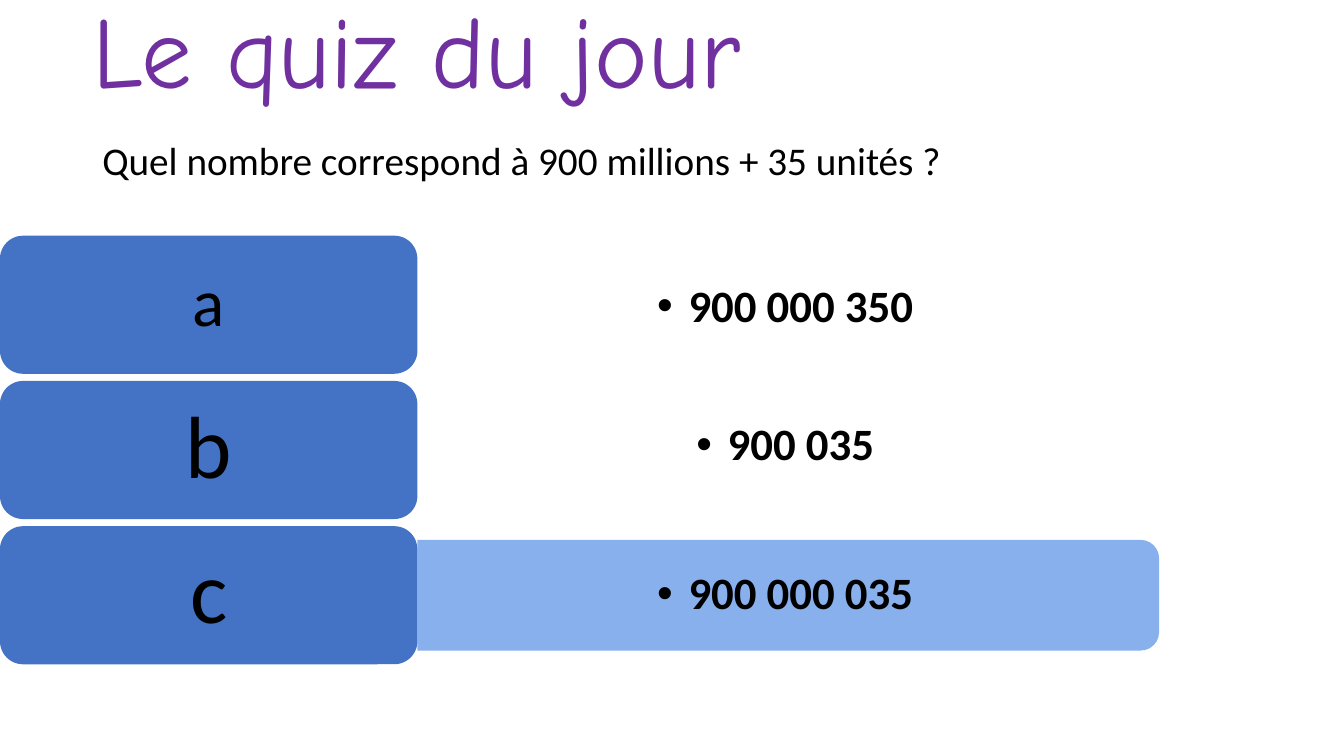
from lxml.etree import SubElement
from pptx import Presentation
from pptx.dml.color import RGBColor
from pptx.enum.shapes import MSO_SHAPE
from pptx.enum.text import MSO_ANCHOR, PP_ALIGN
from pptx.oxml.ns import qn
from pptx.util import Cm, Pt

PURPLE = RGBColor(0x70, 0x30, 0xA0)
BLACK = RGBColor(0x00, 0x00, 0x00)
WHITE = RGBColor(0xFF, 0xFF, 0xFF)
BLUE = RGBColor(0x44, 0x72, 0xC4)
LIGHT_BLUE = RGBColor(0x7C, 0xA8, 0xEA)

LABEL_WIDTH, LABEL_HEIGHT = 10.52, 3.48
FIRST_LABEL_TOP, LABEL_STEP = 5.94, 3.66
BAR_LENGTH, BAR_THICKNESS = 18.69, 2.79
ANSWER_WIDTH, ANSWER_HEIGHT = 18.54, 2.51

# letter, letter size, answer, bar colour, centre of the answer in cm
CHOICES = [
    ("a", 48, "900 000 350", WHITE, 7.75),
    ("b", 63, "900 035", WHITE, 11.25),
    ("c", 63, "900 000 035", LIGHT_BLUE, 15.0),
]


def write(shape, text, size, font="Calibri", color=BLACK, bold=False):
    frame = shape.text_frame
    frame.word_wrap = True
    frame.text = text
    paragraph = frame.paragraphs[0]
    style = paragraph.runs[0].font
    style.name, style.size, style.bold = font, Pt(size), bold
    style.color.rgb = color
    return paragraph


def add_text(slide, left, top, width, height, text, size, **style):
    box = slide.shapes.add_textbox(Cm(left), Cm(top), Cm(width), Cm(height))
    return box.text_frame, write(box, text, size, **style)


def add_block(slide, kind, left, top, width, height, color):
    block = slide.shapes.add_shape(kind, Cm(left), Cm(top), Cm(width), Cm(height))
    block.shadow.inherit = False
    block.fill.solid()
    block.fill.fore_color.rgb = color
    block.line.fill.background()
    return block


def add_title(slide, text):
    frame, paragraph = add_text(slide, 2.33, 0.69, 29.21, 2.92, text, 72.5,
                                font="Comic Neue", color=PURPLE)
    frame.margin_left = frame.margin_right = frame.margin_top = 0
    frame.margin_bottom = Cm(1.5)
    frame.vertical_anchor = MSO_ANCHOR.MIDDLE
    paragraph.line_spacing = 0.9


def add_bar(slide, center, color):
    """Bar turned a quarter so that its rounded corners face right."""
    left = LABEL_WIDTH + (BAR_LENGTH - BAR_THICKNESS) / 2
    bar = add_block(slide, MSO_SHAPE.ROUND_2_SAME_RECTANGLE, left,
                    center - BAR_LENGTH / 2, BAR_THICKNESS, BAR_LENGTH, color)
    bar.rotation = 90
    color_xml = bar.fill._xPr.find(qn("a:solidFill"))[0]
    SubElement(color_xml, qn("a:alpha"), val="90000")


def add_answer(slide, center, answer):
    frame, paragraph = add_text(slide, LABEL_WIDTH, center - ANSWER_HEIGHT / 2,
                                ANSWER_WIDTH, ANSWER_HEIGHT, answer, 32, bold=True)
    frame.margin_left = frame.margin_right = Cm(0.69)
    frame.vertical_anchor = MSO_ANCHOR.MIDDLE
    paragraph.alignment = PP_ALIGN.CENTER
    paragraph.level = 1
    paragraph.line_spacing = 0.9
    properties = paragraph._p.get_or_add_pPr()
    properties.set("marL", str(Cm(0.79)))
    properties.set("indent", str(-Cm(0.79)))
    SubElement(properties, qn("a:buFont"), typeface="Arial")
    SubElement(properties, qn("a:buChar"), char="•")


def add_label(slide, top, letter, size):
    label = add_block(slide, MSO_SHAPE.ROUNDED_RECTANGLE, 0, top,
                      LABEL_WIDTH, LABEL_HEIGHT, BLUE)
    paragraph = write(label, letter, size)
    paragraph.alignment = PP_ALIGN.CENTER
    paragraph.line_spacing = 0.9
    label.text_frame.vertical_anchor = MSO_ANCHOR.MIDDLE


def main():
    deck = Presentation()
    deck.slide_width, deck.slide_height = Cm(33.87), Cm(19.05)
    slide = deck.slides.add_slide(deck.slide_layouts[6])

    add_title(slide, "Le quiz du jour")
    for row, (letter, size, answer, color, center) in enumerate(CHOICES):
        add_bar(slide, center, color)
        add_answer(slide, center, answer)
        add_label(slide, FIRST_LABEL_TOP + row * LABEL_STEP, letter, size)
    add_text(slide, 2.33, 3.3, 33.87, 1.45,
             "Quel nombre correspond à 900 millions + 35 unités ?", 28)

    deck.save("out.pptx")


if __name__ == "__main__":
    main()
